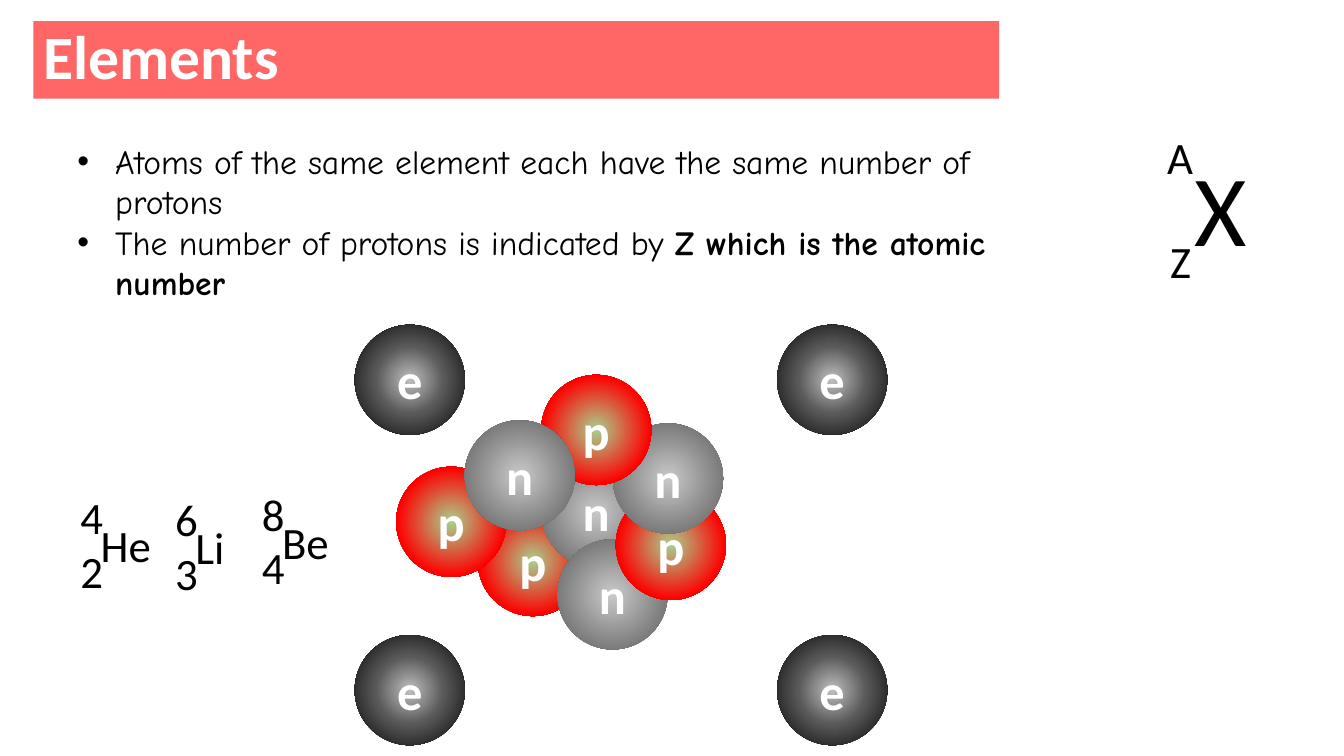
from itertools import product

from pptx import Presentation
from pptx.dml.color import RGBColor
from pptx.enum.shapes import MSO_SHAPE as Shape
from pptx.enum.text import MSO_ANCHOR as Anchor, MSO_AUTO_SIZE as AutoSize, PP_ALIGN as Align
from pptx.oxml import parse_xml
from pptx.oxml.ns import nsdecls
from pptx.util import Pt

THEME = {
    "banner": RGBColor.from_string("FF6666"),
    "white": RGBColor.from_string("FFFFFF"),
    "black": RGBColor.from_string("000000"),
    "heading_font": "Calibri",
    "body_font": "Comic Neue",
    "title_size": Pt(44),
    "body_size": Pt(24),
    "particle_size": Pt(36),
    "symbol_size": Pt(72),
    "nuclide_size": Pt(32),
    "e": [(0, "BFBFBF"), (44, "595959"), (100, "000000")],
    "p": [(0, "A9D18E"), (70, "FF0000"), (100, "C00000")],
    "n": [(0, "C9C9C9"), (70, "7C7C7C"), (100, "525252")],
}


def write(paragraph, words, size, color, bold=False, face=THEME["heading_font"]):
    run = paragraph.add_run()
    run.text = words
    run.font.color.rgb = color
    for key, value in {"name": face, "size": size, "bold": bold}.items():
        setattr(run.font, key, value)


def place(shapes, kind, left, top, width, height, **frame_format):
    box = (Pt(left), Pt(top), Pt(width), Pt(height))
    if kind is None:
        part = shapes.add_textbox(*box)
    else:
        part = shapes.add_shape(kind, *box)
        part.shadow.inherit = False
        part.line.fill.background()
    for key, value in frame_format.items():
        setattr(part.text_frame, key, value)
    return part


deck = Presentation()
deck.slide_width, deck.slide_height = Pt(960), Pt(540)
slide = deck.slides.add_slide(deck.slide_layouts[6])

banner = place(slide.shapes, Shape.RECTANGLE, 23.8, 15.1, 689.8, 55.4,
               vertical_anchor=Anchor.MIDDLE, word_wrap=True)
banner.fill.solid()
banner.fill.fore_color.rgb = THEME["banner"]
heading = banner.text_frame.paragraphs[0]
heading.alignment, heading.line_spacing = Align.LEFT, 0.9
write(heading, "Elements", THEME["title_size"], THEME["white"], True)

facts = place(slide.shapes, Shape.RECTANGLE, 48.2, 97.2, 730.8, 123.8,
              vertical_anchor=Anchor.TOP, word_wrap=True)
facts.fill.solid()
facts.fill.fore_color.rgb = THEME["white"]
facts.line.color.rgb = THEME["white"]
facts.line.width = Pt(4.5)
statements = [
    [("Atoms of the same element each have the same number of protons", False)],
    [("The number of protons is indicated by ", False), ("Z which is the atomic number", True)],
]
for index, statement in enumerate(statements):
    fact = facts.text_frame.add_paragraph() if index else facts.text_frame.paragraphs[0]
    fact.alignment = Align.LEFT
    indent = fact._p.get_or_add_pPr()
    indent.set("marL", str(Pt(27)))
    indent.set("indent", str(-Pt(27)))
    indent.append(parse_xml(f'<a:buFont {nsdecls("a")} typeface="Arial"/>'))
    indent.append(parse_xml(f'<a:buChar {nsdecls("a")} char="•"/>'))
    for words, bold in statement:
        write(fact, words, THEME["body_size"], THEME["black"], bold, THEME["body_font"])

electrons = [("e", left, top) for left, top in product((253.4, 555.1), (232, 453.6))]
nucleus = [
    ("p", 341.3, 361.4), ("n", 386.6, 326.2), ("n", 398.2, 385.2), ("p", 439.9, 349.9),
    ("n", 437.8, 302.4), ("p", 386.6, 267.8), ("p", 283, 333.4), ("n", 331.9, 300.2),
]
for letter, left, top in electrons + nucleus:
    particle = place(slide.shapes, Shape.OVAL, left, top, 78.7, 78.7,
                     vertical_anchor=Anchor.MIDDLE, word_wrap=True)
    stops = "".join(f'<a:gs pos="{pos * 1000}"><a:srgbClr val="{color}"/></a:gs>'
                    for pos, color in THEME[letter])
    particle._element.spPr.insert(2, parse_xml(
        f'<a:gradFill {nsdecls("a")} rotWithShape="1"><a:gsLst>{stops}</a:gsLst><a:path path="circle">'
        '<a:fillToRect l="50000" t="50000" r="50000" b="50000"/></a:path></a:gradFill>'))
    label = particle.text_frame.paragraphs[0]
    label.alignment = Align.CENTER
    write(label, letter, THEME["particle_size"], THEME["white"], True)

notations = [[
    ("X", 846, 100.8, 65.5, 94.3, THEME["symbol_size"]),
    ("A", 826.6, 89.3, 33.1, 46.1, THEME["nuclide_size"]),
    ("Z", 828.7, 163.4, 29.5, 46.1, THEME["nuclide_size"]),
]]
for symbol, mass, atomic, left, top, width in [
    ("Be", "8", "4", 194.4, 364.1, 48.2),
    ("He", "4", "2", 64.8, 366.5, 51.1),
    ("Li", "6", "3", 132.5, 368, 35.3),
]:
    notations.append([
        (symbol, left, top, width, 46.1, THEME["nuclide_size"]),
        (mass, left - 14.4, top - 20.3, 31, 46.1, THEME["nuclide_size"]),
        (atomic, left - 14.4, top + 18, 31, 46.1, THEME["nuclide_size"]),
    ])
for notation in notations:
    nuclide = slide.shapes.add_group_shape()
    for words, left, top, width, height, size in notation:
        sign = place(nuclide.shapes, None, left, top, width, height,
                     word_wrap=size == THEME["symbol_size"], auto_size=AutoSize.SHAPE_TO_FIT_TEXT)
        write(sign.text_frame.paragraphs[0], words, size, THEME["black"])

deck.save("out.pptx")
